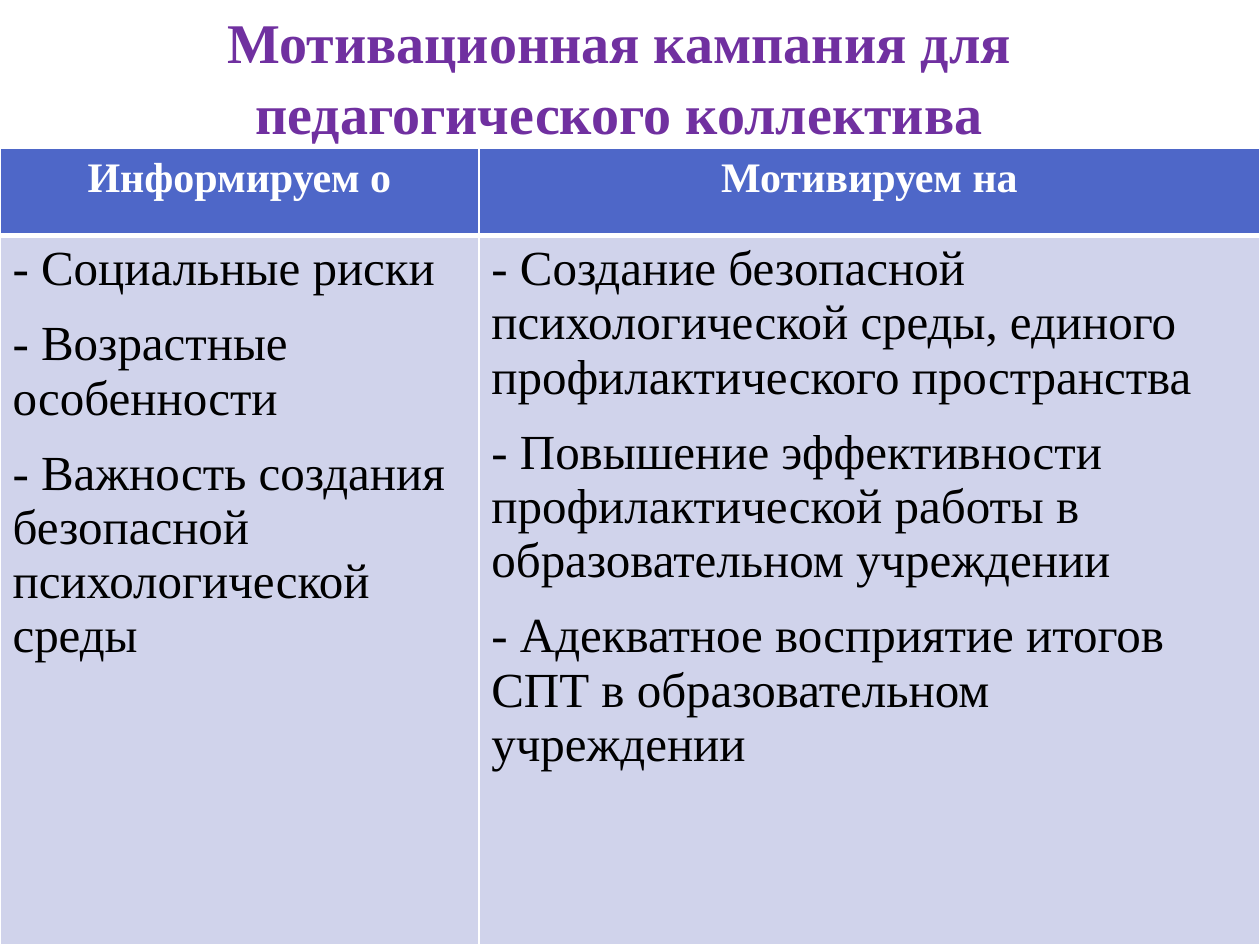
from dataclasses import dataclass

import lxml.etree
import pptx
import pptx.dml.color
import pptx.enum.text
import pptx.oxml.ns
import pptx.util

WHITE = pptx.dml.color.RGBColor(0xFF, 0xFF, 0xFF)
BLACK = pptx.dml.color.RGBColor(0x00, 0x00, 0x00)
PURPLE = pptx.dml.color.RGBColor(0x70, 0x30, 0xA0)
BLUE = pptx.dml.color.RGBColor(0x4E, 0x67, 0xC8)
LAVENDER = pptx.dml.color.RGBColor(0xD0, 0xD3, 0xEB)

FONT = "Times New Roman"
SLIDE_WIDTH = pptx.util.Inches(10)
SLIDE_HEIGHT = pptx.util.Inches(7.5)
TITLE_HEIGHT = pptx.util.Inches(1.18)
HEADER_HEIGHT = pptx.util.Inches(0.69)
TABLE_HEIGHT = SLIDE_HEIGHT - TITLE_HEIGHT
CENTER = pptx.enum.text.PP_ALIGN.CENTER
LEFT = pptx.enum.text.PP_ALIGN.LEFT


@dataclass(frozen=True)
class TextStyle:
    size: int
    color: pptx.dml.color.RGBColor
    bold: bool
    align: pptx.enum.text.PP_ALIGN
    space_after: int = 0
    line_spacing: float = 1.0


@dataclass(frozen=True)
class Column:
    share: float
    heading: str
    points: tuple[str, ...]


TITLE_STYLE = TextStyle(32, PURPLE, True, CENTER, line_spacing=1.07)
HEADING_STYLE = TextStyle(24, WHITE, True, CENTER)
POINT_STYLE = TextStyle(28, BLACK, False, LEFT, space_after=12)

COLUMNS = (
    Column(0.38, "Информируем о", (
        "- Социальные риски",
        "- Возрастные особенности",
        "- Важность создания безопасной психологической среды",
    )),
    Column(0.62, "Мотивируем на", (
        "- Создание безопасной психологической среды, единого профилактического пространства",
        "- Повышение эффективности профилактической работы в образовательном учреждении",
        "- Адекватное восприятие итогов СПТ в образовательном учреждении",
    )),
)


def write_paragraphs(frame: pptx.text.text.TextFrame, texts: tuple[str, ...], style: TextStyle) -> None:
    for index, text in enumerate(texts):
        para = frame.add_paragraph() if index else frame.paragraphs[0]
        para.alignment = style.align
        para.space_before = pptx.util.Pt(0)
        para.space_after = pptx.util.Pt(style.space_after)
        para.line_spacing = style.line_spacing
        span = para.add_run()
        span.text = text
        span.font.name = FONT
        span.font.size = pptx.util.Pt(style.size)
        span.font.bold = style.bold
        span.font.color.rgb = style.color


def set_borders(cell: pptx.table._Cell, bottom: int, top: int) -> None:
    properties = cell._tc.get_or_add_tcPr()
    widths = {"a:lnL": 1, "a:lnR": 1, "a:lnT": top, "a:lnB": bottom}
    for position, (tag, width) in enumerate(widths.items()):
        line = lxml.etree.Element(pptx.oxml.ns.qn(tag), w=str(pptx.util.Pt(width)))
        fill = lxml.etree.SubElement(line, pptx.oxml.ns.qn("a:solidFill"))
        lxml.etree.SubElement(fill, pptx.oxml.ns.qn("a:srgbClr"), val=str(WHITE))
        properties.insert(position, line)


def fill_cell(
    cell: pptx.table._Cell,
    texts: tuple[str, ...],
    style: TextStyle,
    color: pptx.dml.color.RGBColor,
    top: int,
    bottom: int,
) -> None:
    cell.fill.solid()
    cell.fill.fore_color.rgb = color
    write_paragraphs(cell.text_frame, texts, style)
    set_borders(cell, bottom, top)


def add_title(page: pptx.slide.Slide, text: str) -> None:
    box = page.shapes.title
    box.left, box.top = pptx.util.Inches(0.29), 0
    box.width, box.height = pptx.util.Inches(9.25), TITLE_HEIGHT
    box.text_frame.word_wrap = True
    box.text_frame.auto_size = pptx.enum.text.MSO_AUTO_SIZE.NONE
    box.text_frame.vertical_anchor = pptx.enum.text.MSO_ANCHOR.MIDDLE
    write_paragraphs(box.text_frame, (text,), TITLE_STYLE)


def add_campaign_table(page: pptx.slide.Slide) -> None:
    frame = page.shapes.add_table(2, len(COLUMNS), 0, TITLE_HEIGHT, SLIDE_WIDTH, TABLE_HEIGHT)
    table = frame.table
    table.rows[0].height = HEADER_HEIGHT
    table.rows[1].height = TABLE_HEIGHT - HEADER_HEIGHT
    for index, column in enumerate(COLUMNS):
        table.columns[index].width = round(SLIDE_WIDTH * column.share)
        fill_cell(table.cell(0, index), (column.heading,), HEADING_STYLE, BLUE, top=1, bottom=3)
        fill_cell(table.cell(1, index), column.points, POINT_STYLE, LAVENDER, top=3, bottom=1)


def main() -> None:
    deck = pptx.Presentation()
    deck.slide_width, deck.slide_height = SLIDE_WIDTH, SLIDE_HEIGHT
    page = deck.slides.add_slide(deck.slide_layouts.get_by_name("Title Only"))
    add_campaign_table(page)
    add_title(page, "Мотивационная кампания для педагогического коллектива")
    deck.save("out.pptx")


if __name__ == "__main__":
    main()
